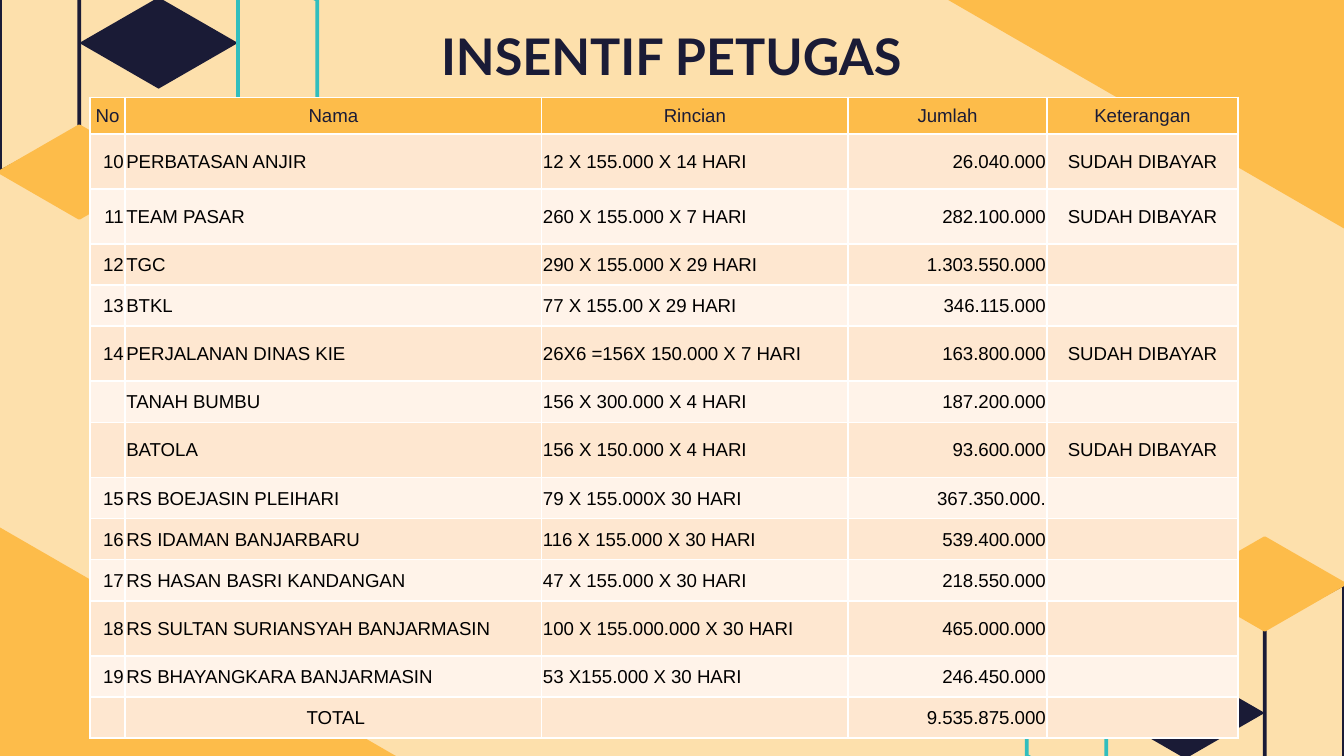
from lxml import etree
from pptx import Presentation
from pptx import util as u
from pptx.dml.color import RGBColor
from pptx.enum import shapes, text
from pptx.oxml import ns

W = 10
H = W * 9 / 16
COL, ROW = 0.59, 0.32
NAVY, GOLD, TEAL, CREAM = "1A1B36", "FDBC4A", "31BEBE", "FDE0AC"
BANDS = ["FFF3E9", "FEE7D0"]
LEFT, CENTER, RIGHT = text.PP_ALIGN.LEFT, text.PP_ALIGN.CENTER, text.PP_ALIGN.RIGHT
ALIGNS = [RIGHT, LEFT, LEFT, RIGHT, CENTER]
COL_WIDTHS = [0.26, 3.1, 2.28, 1.48, 1.42]
TABLE_H, HEADER_H, TALL = 4.77, 0.27, 0.41
TALL_ROWS = {1, 2, 5, 7, 11}
PAID = "SUDAH DIBAYAR"
TOTAL = " TOTAL"
ROWS = [
    ("No", "Nama", "Rincian", "Jumlah", "Keterangan"),
    ("10", "PERBATASAN ANJIR", "12 X 155.000 X 14 HARI", "26.040.000", PAID),
    ("11", "TEAM PASAR", "260 X 155.000 X 7 HARI", "282.100.000", PAID),
    ("12", "TGC", "290 X 155.000 X 29 HARI", "1.303.550.000", ""),
    ("13", "BTKL", "77 X 155.00 X 29 HARI", "346.115.000", ""),
    ("14", "PERJALANAN DINAS KIE", "26X6 =156X 150.000 X 7 HARI", "163.800.000", PAID),
    ("", "TANAH BUMBU", "156 X 300.000 X 4 HARI", "187.200.000", ""),
    ("", "BATOLA", "156 X 150.000 X 4 HARI", "93.600.000", PAID),
    ("15", "RS BOEJASIN PLEIHARI", "79 X 155.000X 30 HARI", "367.350.000.", ""),
    ("16", "RS IDAMAN BANJARBARU", "116 X 155.000 X 30 HARI", "539.400.000", ""),
    ("17", "RS HASAN BASRI KANDANGAN", "47 X 155.000 X 30 HARI", "218.550.000", ""),
    ("18", "RS SULTAN SURIANSYAH BANJARMASIN", "100 X 155.000.000 X 30 HARI", "465.000.000", ""),
    ("19", "RS BHAYANGKARA BANJARMASIN", "53 X155.000 X 30 HARI", "246.450.000", ""),
    ("", TOTAL, "", "9.535.875.000", ""),
]


def rgb(code):
    """Turn a hex string into a colour."""
    return RGBColor.from_string(code)


def apply(obj, values):
    """Set every attribute named in a dict of format values."""
    for name, value in values.items():
        setattr(obj, name, value)


def paint(fill, code):
    """Give a fill one solid colour."""
    fill.solid()
    fill.fore_color.rgb = rgb(code)


def outline(sp, code):
    """Draw a thin line of one colour around a shape without shadow."""
    sp.shadow.inherit = False
    sp.line.color.rgb = rgb(code)
    sp.line.width = u.Pt(2)


def place(col, row, turned):
    """Map a grid point to inches, half-turned about the slide centre if asked."""
    x, y = col * COL, row * ROW
    return (W - x, H - y) if turned else (x, y)


def diamond(s, center, size, code, lined=False):
    """Add a diamond around a centre point."""
    (x, y), (w, h) = center, size
    box = [u.Inches(v) for v in (x - w / 2, y - h / 2, w, h)]
    sp = s.shapes.add_shape(shapes.MSO_SHAPE.DIAMOND, *box)
    paint(sp.fill, code)
    outline(sp, code)
    if not lined:
        sp.line.fill.background()


def frame(s, points, code):
    """Add an unfilled outline through the given points."""
    pts = [(u.Inches(x), u.Inches(y)) for x, y in points]
    builder = s.shapes.build_freeform(*pts[0], scale=1.0)
    builder.add_line_segments(pts[1:], close=True)
    sp = builder.convert_to_shape()
    sp.fill.background()
    outline(sp, code)


def corner(s, turned):
    """Add the frames and diamonds of one decorated corner."""
    small = (2 * COL, 0.68)
    navy_frame = [(0, 4), (1, 3), (1, -1.25), (0, -0.25)]
    teal_frame = [(3, 3), (4, 4), (4, 0), (3, -1)]
    frame(s, [place(*p, turned) for p in navy_frame], NAVY)
    diamond(s, place(1, 4, turned), small, GOLD, lined=True)
    diamond(s, place(2, 1, turned), small, NAVY)
    frame(s, [place(*p, turned) for p in teal_frame], TEAL)


def write(p, words, align, size, font, code, bold=False):
    """Write one formatted run, or set the size of an empty paragraph."""
    p.alignment = align
    if not words:
        p._p.get_or_add_endParaRPr().set("sz", str(size * 100))
        return
    r = p.add_run()
    r.text = words
    apply(r.font, {"size": u.Pt(size), "name": font, "bold": bold})
    r.font.color.rgb = rgb(code)


def title(s, words):
    """Add the centred slide title."""
    box = [u.Inches(v) for v in (0.252 * W, -0.032 * H, 0.495 * W, 0.226 * H)]
    tf = s.shapes.add_textbox(*box).text_frame
    margins = {f"margin_{side}": u.Inches(0.1) for side in ("left", "top", "right", "bottom")}
    apply(tf, {"word_wrap": True, "vertical_anchor": text.MSO_ANCHOR.MIDDLE, **margins})
    tf.paragraphs[0].line_spacing = 0.8
    write(tf.paragraphs[0], words, CENTER, 27, "Lato", NAVY, True)


def borders(cell):
    """Draw white lines on the four sides of a cell."""
    tc_pr = cell._tc.get_or_add_tcPr()
    for side in "LRTB":
        ln = etree.SubElement(tc_pr, ns.qn(f"a:ln{side}"), w=str(u.Pt(1)))
        solid = etree.SubElement(ln, ns.qn("a:solidFill"))
        etree.SubElement(solid, ns.qn("a:srgbClr"), val="FFFFFF")


def row_heights():
    """Share the height left by the header and tall rows among the low rows."""
    tall = len(TALL_ROWS)
    low = (TABLE_H - HEADER_H - tall * TALL) / (len(ROWS) - 1 - tall)
    return [HEADER_H] + [TALL if i in TALL_ROWS else low for i in range(1, len(ROWS))]


def table(s):
    """Add the payment table with its header and banded rows."""
    box = [u.Inches(v) for v in (0.067 * W, 0.129 * H, sum(COL_WIDTHS), TABLE_H)]
    tbl = s.shapes.add_table(len(ROWS), len(COL_WIDTHS), *box).table
    for column, width in zip(tbl.columns, COL_WIDTHS):
        column.width = u.Inches(width)
    for row, height in zip(tbl.rows, row_heights()):
        row.height = u.Inches(height)
    edge = u.Inches(0.01)
    layout = {"margin_left": edge, "margin_right": edge, "margin_top": edge,
              "margin_bottom": 0, "vertical_anchor": text.MSO_ANCHOR.MIDDLE}
    for i, values in enumerate(ROWS):
        for j, words in enumerate(values):
            cell = tbl.cell(i, j)
            apply(cell, layout)
            borders(cell)
            paint(cell.fill, BANDS[i % 2] if i else GOLD)
            centered = i == 0 or words == TOTAL
            write(cell.text_frame.paragraphs[0], words, CENTER if centered else ALIGNS[j],
                  10, "Arial", "000000" if i else NAVY)


def main():
    """Build and save the slide."""
    prs = Presentation()
    apply(prs, {"slide_width": u.Inches(W), "slide_height": u.Inches(H)})
    s = prs.slides.add_slide(prs.slide_layouts[6])
    paint(s.background.fill, CREAM)
    for turned in (True, False):
        corner(s, turned)
    for center in ((W, 0), (0, H)):
        diamond(s, center, (5.89, 3.4), GOLD)
    title(s, "INSENTIF PETUGAS")
    table(s)
    prs.save("out.pptx")


if __name__ == "__main__":
    main()
